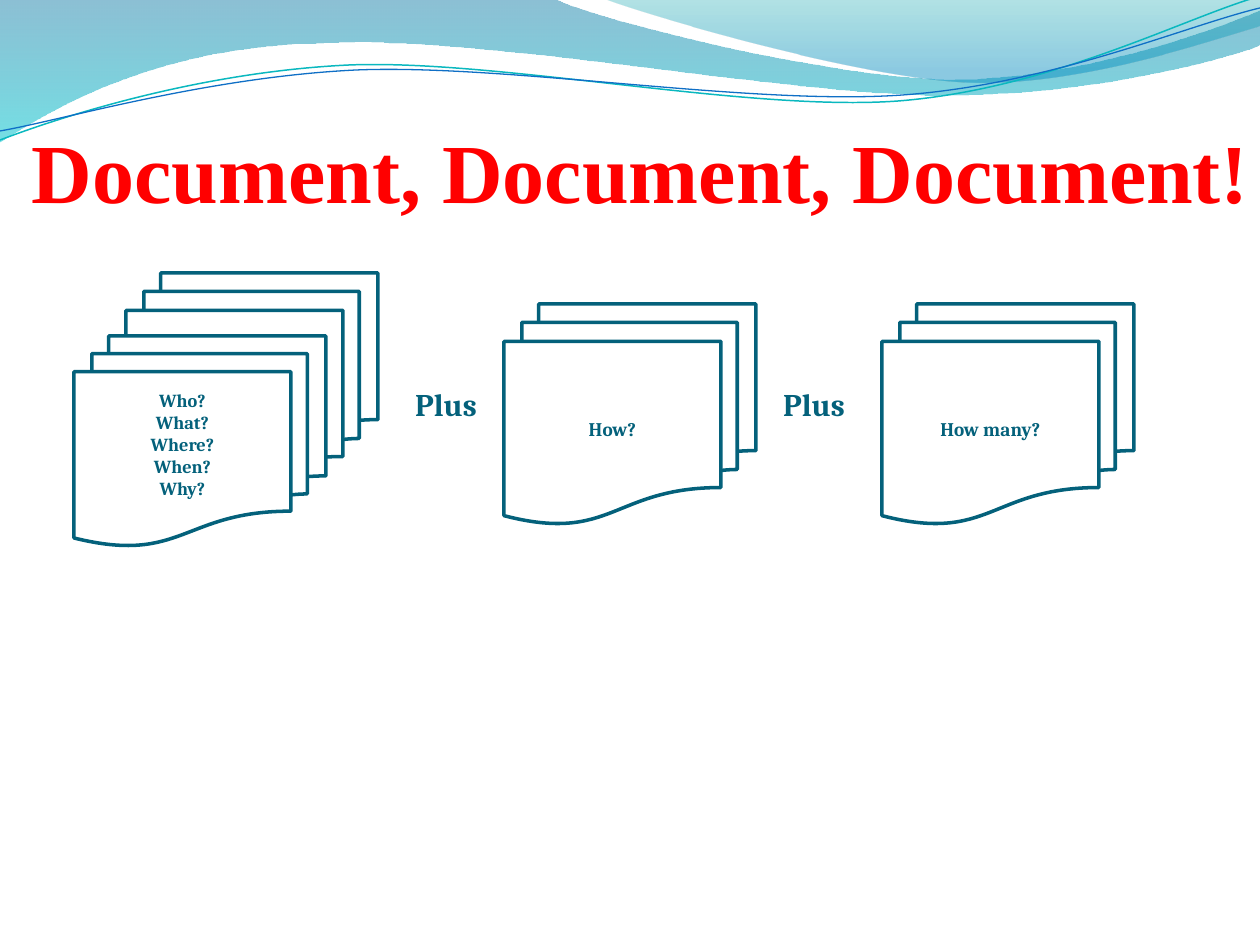
from pptx import Presentation
from pptx.dml.color import RGBColor
from pptx.enum.shapes import MSO_SHAPE as Kind
from pptx.enum.text import MSO_ANCHOR as Anchor, PP_ALIGN as Align
from pptx.oxml import parse_xml
from pptx.oxml.ns import nsdecls, qn
from pptx.util import Pt

PX = 914400 / 126


def emu(px):
    return round(px * PX)


def color(code):
    return RGBColor.from_string(code)


def write(shape, text, font="Cambria", size=11, ink="04617B",
          align=Align.CENTER, inset=(13, 6, 13, 6)):
    """Fill a shape with bold text, one paragraph a line."""
    frame = shape.text_frame
    frame.word_wrap = True
    frame.vertical_anchor = Anchor.MIDDLE
    (frame.margin_left, frame.margin_top,
     frame.margin_right, frame.margin_bottom) = map(emu, inset)
    for i, line in enumerate(text.split("\n")):
        para = frame.add_paragraph() if i else frame.paragraphs[0]
        para.alignment = align
        run = para.add_run()
        run.text = line
        run.font.name, run.font.size, run.font.bold = font, Pt(size), True
        run.font.color.rgb = color(ink)


def bend(shape, parts):
    """Join the straight segments of each three-point part into one cubic."""
    legs = iter(list(shape.element.spPr.iter(qn("a:lnTo"))))
    for part in parts:
        group = [next(legs) for _ in part]
        if len(group) == 3:
            cubic = parse_xml(f'<a:cubicBezTo {nsdecls("a")}/>')
            group[0].addprevious(cubic)
            for leg in group:
                cubic.append(leg[0])
                leg.getparent().remove(leg)


class Deck:
    ink = "04617B"

    def __init__(self, wide, high):
        self.prs = Presentation()
        self.prs.slide_width, self.prs.slide_height = emu(wide), emu(high)
        self.slide = self.prs.slides.add_slide(self.prs.slide_layouts[6])
        self.shapes = self.slide.shapes

    def outline(self, start, parts, close):
        """Draw parts of one point (straight) or three points (cubic)."""
        pen = self.shapes.build_freeform(*map(emu, start), scale=1.0)
        pen.add_line_segments(
            [(emu(x), emu(y)) for part in parts for x, y in part], close=close)
        shape = pen.convert_to_shape()
        bend(shape, parts)
        shape.shadow.inherit = False
        return shape

    def wave(self, start, parts, stops):
        """Draw a filled band; stops are (position, colour, opacity) in percent."""
        shape = self.outline(start, parts, True)
        shape.line.fill.background()
        shape.fill.gradient()
        marks = "".join(
            f'<a:gs pos="{pos * 1000}"><a:srgbClr val="{code}">'
            f'<a:alpha val="{alpha * 1000}"/></a:srgbClr></a:gs>'
            for pos, code, alpha in stops)
        props = shape.element.spPr
        props.replace(props.find(qn("a:gradFill")), parse_xml(
            f'<a:gradFill {nsdecls("a")} rotWithShape="1"><a:gsLst>{marks}'
            '</a:gsLst><a:lin ang="5400000" scaled="0"/></a:gradFill>'))

    def curve(self, start, parts, ink, width):
        shape = self.outline(start, parts, False)
        shape.fill.background()
        shape.line.color.rgb = color(ink)
        shape.line.width = Pt(width)

    def stack(self, x, y, wide, high, text="", **style):
        shape = self.shapes.add_shape(Kind.FLOWCHART_MULTIDOCUMENT,
                                      *map(emu, (x, y, wide, high)))
        shape.shadow.inherit = False
        shape.fill.solid()
        shape.fill.fore_color.rgb = color("FFFFFF")
        shape.line.color.rgb = color(self.ink)
        shape.line.width = Pt(2)
        if text:
            write(shape, text, ink=self.ink, **style)

    def label(self, x, y, wide, high, text, **style):
        box = self.shapes.add_textbox(*map(emu, (x, y, wide, high)))
        write(box, text, **style)


def main():
    deck = Deck(1260, 945)

    deck.wave((0, 0), [
        [(554, -1)],
        [(600, 21), (837, 79), (955, 79)],
        [(1075, 79), (1207, 33), (1260, 11)],
        [(1261, 45)],
        [(1239, 55), (1096, 96), (940, 95)],
        [(784, 95), (481, 35), (324, 43)],
        [(163, 45), (58, 105), (-1, 142)],
    ], [(0, "0074A1", 45), (100, "00C6CF", 55)])
    deck.wave((604, -1), [
        [(641, 14), (859, 78), (969, 82)],
        [(1079, 86), (1211, 40), (1260, 26)],
        [(1260, 0)],
    ], [(0, "00A1A9", 30), (80, "008BBF", 45)])
    deck.curve((0, 140), [
        [(60, 117), (199, 72), (349, 65)],
        [(498, 59), (747, 112), (898, 101)],
        [(1050, 89), (1182, 19), (1257, -3)],
    ], "0AB8BF", 0.85)
    deck.curve((0, 131), [
        [(59, 121), (207, 77), (357, 70)],
        [(508, 64), (752, 106), (903, 95)],
        [(1053, 84), (1185, 26), (1260, 8)],
    ], "0F6FC6", 0.75)

    deck.label(32, 113, 1218, 107, "Document, Document, Document!",
               font="Times New Roman", size=48, ink="FF0000",
               align=Align.LEFT, inset=(0, 6, 0, 0))

    deck.stack(126, 273, 252, 220)
    deck.stack(74, 336, 252, 210, "Who?\nWhat?\nWhere?\nWhen?\nWhy?",
               size=10.5, inset=(13, 6, 13, 27))
    for x, text in ((504, "How?"), (882, "How many?")):
        deck.stack(x, 304, 252, 220, text)
    for x in (399, 767):
        deck.label(x, 367, 94, 73, "Plus", size=18)

    deck.prs.save("out.pptx")


if __name__ == "__main__":
    main()
